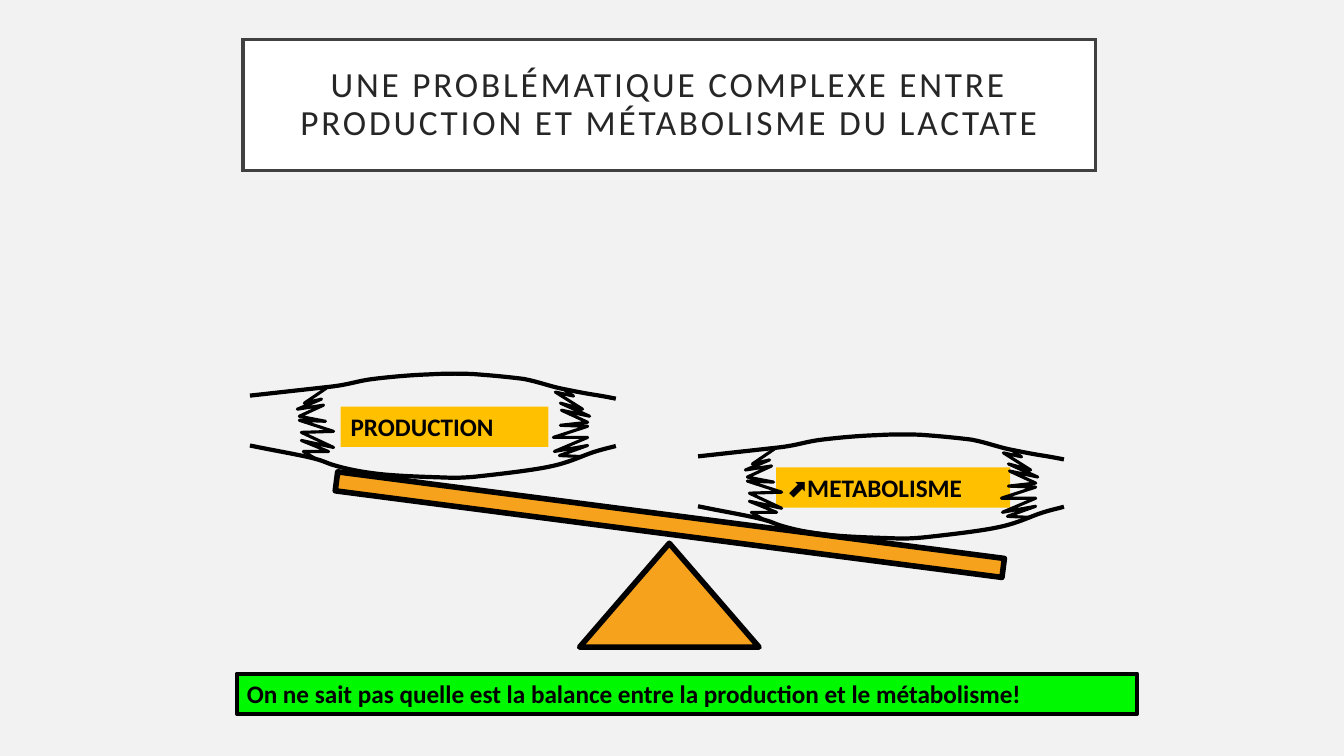
from dataclasses import dataclass

from pptx import Presentation, util as u
from pptx.dml.color import RGBColor
from pptx.enum import shapes, text
from pptx.oxml import ns, xmlchemy
from pptx.shapes.base import BaseShape
from pptx.slide import Slide
from pptx.text.text import TextFrame

Point = tuple[float, float]

# Grid: square cells, 75 rows on a 7.5 inch high slide
CELL = u.Inches(0.1)
COLUMNS, ROWS = 133.33, 75
BLACK, ORANGE, AMBER = "000000", "F6A21D", "FFC000"


@dataclass(frozen=True)
class Area:
    left: float
    top: float
    width: float
    height: float


@dataclass(frozen=True)
class Block:
    """A preset shape, optionally with a line of text."""
    area: Area
    fill: str
    line_width: float = 0
    kind: shapes.MSO_SHAPE = shapes.MSO_SHAPE.RECTANGLE
    rotation: float = 0
    words: str = ""


@dataclass(frozen=True)
class Stroke:
    """An open outline: straight points, then cubic triples."""
    width: float
    points: list[Point]
    curves: tuple[Point, ...] = ()


def grid(cells: float) -> u.Emu:
    return u.Emu(round(cells * CELL))


def color(value: str) -> RGBColor:
    return RGBColor.from_string(value)


def place(shape: BaseShape, area: Area) -> None:
    shape.left, shape.top = grid(area.left), grid(area.top)
    shape.width, shape.height = grid(area.width), grid(area.height)


def paint(shape: BaseShape, fill: str = "", line: str = BLACK, width: float = 0) -> None:
    if fill:
        shape.fill.solid()
        shape.fill.fore_color.rgb = color(fill)
    else:
        shape.fill.background()
    if width:
        shape.line.color.rgb = color(line)
        shape.line.width = u.Pt(width)
    else:
        shape.line.fill.background()


def sharpen(shape: BaseShape) -> None:
    """Give the outline square corners."""
    miter = xmlchemy.OxmlElement("a:miter")
    miter.set("lim", "800000")
    shape.line._get_or_add_ln().append(miter)


def write(frame: TextFrame, words: str, *, size: float = 18, ink: str = BLACK,
          bold: bool = True, align: text.PP_ALIGN = text.PP_ALIGN.LEFT,
          anchor: text.MSO_ANCHOR = text.MSO_ANCHOR.TOP,
          inset: float | None = None, leading: float = 1, tracking: float = 0) -> None:
    frame.word_wrap = True
    frame.auto_size = text.MSO_AUTO_SIZE.NONE
    frame.vertical_anchor = anchor
    if inset is not None:
        frame.margin_left = frame.margin_right = grid(inset)
        frame.margin_top = frame.margin_bottom = grid(inset)
    para = frame.paragraphs[0]
    para.alignment, para.line_spacing = align, leading
    span = para.add_run()
    span.text = words
    span.font.name, span.font.size, span.font.bold = "Calibri", u.Pt(size), bold
    span.font.color.rgb = color(ink)
    if tracking:
        span._r.get_or_add_rPr().set("spc", str(round(tracking * 100)))


def draw_block(page: Slide, block: Block) -> None:
    shape = page.shapes.add_shape(block.kind, 0, 0, CELL, CELL)
    place(shape, block.area)
    shape.rotation = block.rotation
    shape.shadow.inherit = False
    paint(shape, block.fill, width=block.line_width)
    if block.words:
        write(shape.text_frame, block.words)


def bend(shape: BaseShape, straight: int) -> None:
    """Turn the segments after the straight ones into cubic curves, three by three."""
    segments = list(shape._element.iter(ns.qn("a:lnTo")))[straight:]
    for first in range(0, len(segments), 3):
        curve = xmlchemy.OxmlElement("a:cubicBezTo")
        segments[first].addprevious(curve)
        for segment in segments[first:first + 3]:
            curve.append(segment[0])
            segment.getparent().remove(segment)


def draw_stroke(page: Slide, stroke: Stroke, shift: Point) -> None:
    start, *rest = [(grid(x + shift[0]), grid(y + shift[1]))
                    for x, y in (*stroke.points, *stroke.curves)]
    builder = page.shapes.build_freeform(*start, scale=1.0)
    builder.add_line_segments(rest, close=False)
    shape = builder.convert_to_shape()
    bend(shape, len(stroke.points) - 1)
    shape.shadow.inherit = False
    paint(shape, width=stroke.width)


TITLE = "UNE PROBLÉMATIQUE COMPLEXE ENTRE PRODUCTION ET MÉTABOLISME DU LACTATE"

BLOCKS = [
    Block(Area(57.5, 53.9, 17.8, 10.3), ORANGE, 4, shapes.MSO_SHAPE.ISOSCELES_TRIANGLE),
    Block(Area(33.1, 51.1, 66.7, 1.9), ORANGE, 4, rotation=7.4),
    Block(Area(33.8, 40.34, 20.6, 4), AMBER, words="PRODUCTION"),
    Block(Area(77, 46.36, 23.2, 4), AMBER, words="⬈METABOLISME"),
]
MESSAGE = Block(Area(23.5, 66.83, 89.3, 4), "00F900", 3,
                words="On ne sait pas quelle est la balance entre la production et le métabolisme!")

# One muscle: upper and lower membranes, then left and right torn ends
MUSCLE = [
    Stroke(3, [(24.8, 39.25), (32.9, 38.35)], (
        (34.9, 38.1), (35.4, 37.8), (37, 37.6), (38.6, 37.4), (40.8, 37.2), (42.4, 37.15),
        (44.1, 37.05), (45.2, 37.05), (46.8, 37.1), (48.3, 37.2), (50.5, 37.4), (52, 37.6),
        (53.5, 37.9), (54.5, 38.3), (55.7, 38.55), (56.9, 38.8), (58.2, 39.05), (59.2, 39.2),
        (60.1, 39.35), (60.6, 39.45), (61.1, 39.55))),
    Stroke(3, [(24.8, 44.2)], (
        (27.2, 44.7), (29.6, 45.1), (31, 45.45), (32.4, 45.8), (32.2, 45.9), (33.3, 46.2),
        (34.3, 46.5), (35.7, 46.8), (37.4, 47), (39, 47.2), (41.7, 47.3), (43.3, 47.35),
        (45, 47.4), (45.2, 47.45), (47.1, 47.3), (48.9, 47.1), (52.6, 46.7), (54.5, 46.3),
        (56.5, 45.9), (57.8, 45.2), (58.9, 44.85), (60, 44.5), (60.6, 44.4), (61.1, 44.25))),
    Stroke(2.25, [
        (32.4, 38.5), (30.2, 40), (31.9, 39.6), (29.5, 40.6), (32.1, 40.2),
        (29.7, 41.3), (32.3, 41.8), (29.7, 41.7), (33.1, 42.8), (29.9, 42.9),
        (33.1, 44.4), (29.9, 43.7), (32.6, 44.8), (30.1, 44.8), (31.3, 45.5)]),
    Stroke(2.25, [
        (55.9, 38.6), (56.9, 39.3), (55.1, 38.9), (57.8, 40.6), (55.6, 40),
        (58.5, 41.3), (55.7, 40.7), (58.3, 41.9), (55.6, 42.2), (58.3, 42.3),
        (54.9, 43.4), (58.3, 43.4), (55, 44.8), (58.3, 44.2), (55.5, 45.2),
        (57.7, 45.3)]),
]
MUSCLE_SHIFTS = [(0, 0), (44.45, 6.03)]


def main() -> None:
    deck = Presentation()
    deck.slide_width, deck.slide_height = grid(COLUMNS), grid(ROWS)
    page = deck.slides.add_slide(deck.slide_layouts[5])
    page.background.fill.solid()
    page.background.fill.fore_color.rgb = color("F2F2F2")

    # Title
    title = page.shapes.title
    place(title, Area(24.13, 3.94, 84.53, 13))
    paint(title, "FFFFFF", "404040", 2.5)
    sharpen(title)
    write(title.text_frame, TITLE, size=25.2, ink="262626", bold=False,
          align=text.PP_ALIGN.CENTER, anchor=text.MSO_ANCHOR.MIDDLE,
          inset=2, leading=0.9, tracking=2)

    # Balance and labels
    for block in BLOCKS:
        draw_block(page, block)

    # Muscles on both sides
    for shift in MUSCLE_SHIFTS:
        for stroke in MUSCLE:
            draw_stroke(page, stroke, shift)

    # Closing message
    draw_block(page, MESSAGE)
    deck.save("out.pptx")


if __name__ == "__main__":
    main()
